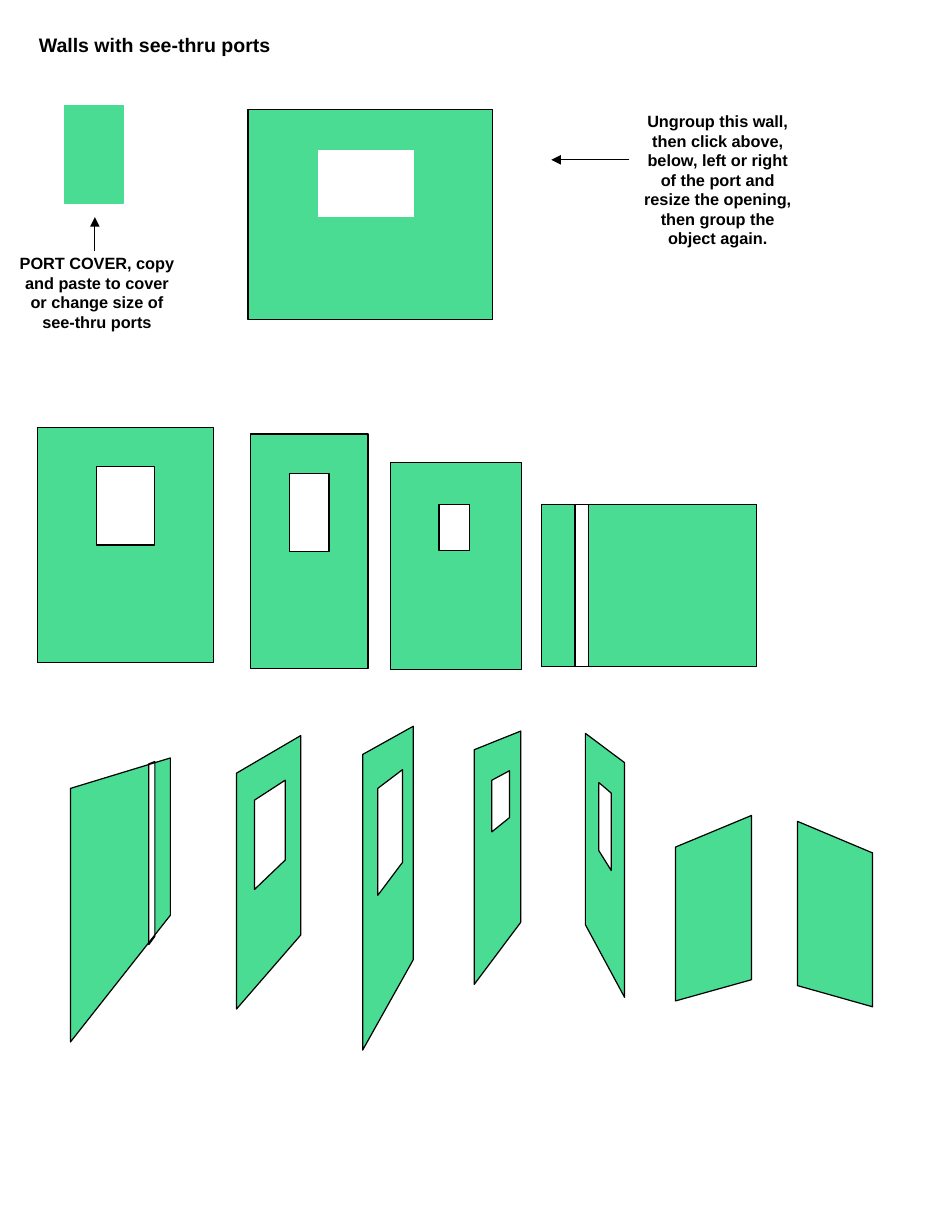
from lxml import etree
from pptx import Presentation
from pptx.dml.color import RGBColor
from pptx.enum.shapes import MSO_CONNECTOR, MSO_SHAPE
from pptx.enum.text import MSO_ANCHOR, MSO_AUTO_SIZE, PP_ALIGN
from pptx.oxml.ns import qn
from pptx.util import Pt

STRAIGHT = MSO_CONNECTOR.STRAIGHT
RECTANGLE = MSO_SHAPE.RECTANGLE
TOP = MSO_ANCHOR.TOP
GROW = MSO_AUTO_SIZE.SHAPE_TO_FIT_TEXT
LEFT, CENTER = PP_ALIGN.LEFT, PP_ALIGN.CENTER
TITLE_ONLY = 5


def color(value):
    return RGBColor.from_string(value)


def block(left, top, width, height):
    """Return a rectangle as a panel: left, right, then top and bottom of each side."""
    bottom = top + height
    return left, left + width, top, bottom, top, bottom


def corners(panel):
    left, right, left_top, left_bottom, right_top, right_bottom = panel
    points = [(left, left_top), (left, left_bottom), (right, right_bottom), (right, right_top)]
    return [(Pt(x), Pt(y)) for x, y in points]


def write(box, text, size, align=LEFT, inset=None, line_height=None, font="Arial", ink="000000"):
    frame = box.text_frame
    frame.text = text
    frame.word_wrap = True
    frame.auto_size = GROW
    frame.vertical_anchor = TOP
    if inset is not None:
        frame.margin_left = frame.margin_right = Pt(inset)
        frame.margin_top = frame.margin_bottom = Pt(inset)
    para = frame.paragraphs[0]
    para.alignment = align
    if line_height:
        para.line_spacing = Pt(line_height)
    span = para.runs[0]
    span.font.name = font
    span.font.size = Pt(size)
    span.font.bold = True
    span.font.color.rgb = color(ink)


class WallPage:
    green = "4ADC93"
    black = "000000"

    def __init__(self, deck):
        self.slide = deck.slides.add_slide(deck.slide_layouts[TITLE_ONLY])
        self.shapes = self.slide.shapes

    def start_group(self):
        self.shapes = self.slide.shapes.add_group_shape().shapes

    def end_group(self):
        self.shapes = self.slide.shapes

    def title(self, text, left, top, width, height):
        box = self.slide.shapes.title
        box.left, box.top, box.width, box.height = Pt(left), Pt(top), Pt(width), Pt(height)
        write(box, text, size=12)

    def note(self, text, left, top, width, height):
        box = self.shapes.add_textbox(Pt(left), Pt(top), Pt(width), Pt(height))
        write(box, text, size=10, align=CENTER, inset=0, line_height=12)

    def arrow(self, start, end):
        line = self.shapes.add_connector(STRAIGHT, *(Pt(value) for value in start + end))
        line.line.color.rgb = color(self.black)
        line.line.width = Pt(0.75)
        etree.SubElement(line.line._get_or_add_ln(), qn("a:tailEnd"), type="triangle")
        etree.SubElement(line._element.spPr, qn("a:effectLst"))

    def paint(self, shape, edge):
        shape.shadow.inherit = False
        shape.fill.solid()
        shape.fill.fore_color.rgb = color(self.green)
        shape.line.color.rgb = color(edge)
        shape.line.width = Pt(0)

    def cover(self, left, top, width, height):
        shape = self.shapes.add_shape(RECTANGLE, Pt(left), Pt(top), Pt(width), Pt(height))
        self.paint(shape, self.green)

    def wall(self, panel, port=None, edge=black):
        """Draw a panel, with an opening cut out where a port is given."""
        first, *others = corners(panel)
        builder = self.shapes.build_freeform(*first)
        builder.add_line_segments(others, close=True)
        if port:
            first, *others = corners(port)
            builder.move_to(*first)
            builder.add_line_segments(others, close=True)
        self.paint(builder.convert_to_shape(), edge)


FRONT_WALLS = [
    (block(332, 309.6, 132.2, 99.4), block(352.7, 309.6, 8.4, 99.4)),
    (block(239.8, 283.7, 80, 127.4), block(269.3, 309.6, 18.7, 28.1)),
    (block(153.8, 266.4, 72, 144), block(177.8, 290.6, 24, 48)),
    (block(23, 262.5, 108, 144), block(59, 286.5, 36, 48)),
]

SIDE_WALLS = [
    ((43.2, 104.5, 483.8, 639.4, 465.1, 561.6), (91.3, 95, 468.7, 579.6, 467.3, 574.6)),
    ((145.1, 184.5, 474.5, 619.2, 451.4, 573.8), (156.2, 175, 491, 545.8, 478.8, 527.8)),
    ((222.5, 253.5, 463, 644.4, 445.7, 589), (231.8, 247, 483.8, 549.4, 472.3, 529.2)),
    ((290.9, 319.5, 460.1, 604.1, 448.6, 565.9), (301.7, 312.5, 478.8, 510.5, 473, 501.8)),
    ((359.1, 383.2, 450, 567.4, 468, 612), (367.4, 375, 480.2, 522, 486.7, 534.2)),
    ((414.4, 461, 519.8, 614.2, 500.4, 601.2), None),
    ((489.2, 535.3, 504, 604.8, 523.4, 617.8), None),
]

# Panels around the adjustable port: left, right, below, above
PORT_SIDES = [
    block(154.8, 71.5, 39.6, 120),
    block(254.2, 72, 43.9, 120),
    block(154.8, 133.4, 143.3, 58.6),
    block(155.5, 71.3, 143.3, 20.2),
]


def main():
    deck = Presentation()
    deck.slide_width, deck.slide_height = Pt(576), Pt(756)
    page = WallPage(deck)
    page.title("Walls with see-thru ports", 16.6, 16.6, 174.2, 21.6)

    for panel, port in FRONT_WALLS + SIDE_WALLS:
        page.wall(panel, port)

    page.cover(39.6, 64.8, 36, 59.8)
    page.start_group()
    page.note("PORT COVER, copy and paste to cover or change size of see-thru ports",
              11.4, 155.5, 96, 48)
    page.arrow((58.2, 153.8), (58.2, 133.2))
    page.end_group()

    page.start_group()
    page.wall(block(152.2, 67.3, 150, 128.6), block(157.7, 74.9, 137.5, 113))
    for side in PORT_SIDES:
        page.wall(side, edge=page.green)
    page.end_group()

    page.start_group()
    page.note("Ungroup this wall, then click above, below, left or right of the port and "
              "resize the opening, then group the object again.", 392.2, 68.4, 96, 84)
    page.arrow((386, 98.1), (338.2, 98.1))
    page.end_group()

    deck.save("out.pptx")


if __name__ == "__main__":
    main()
